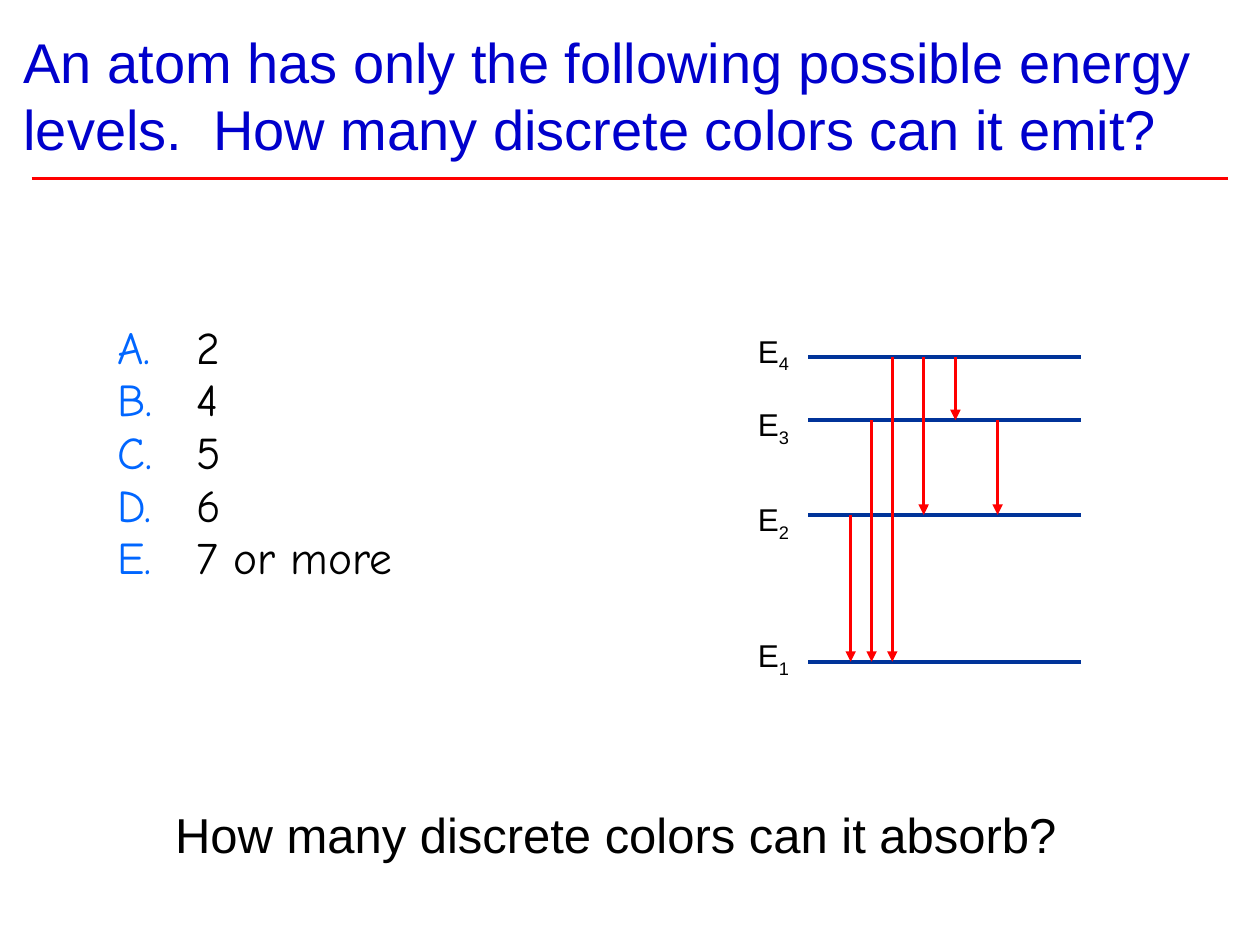
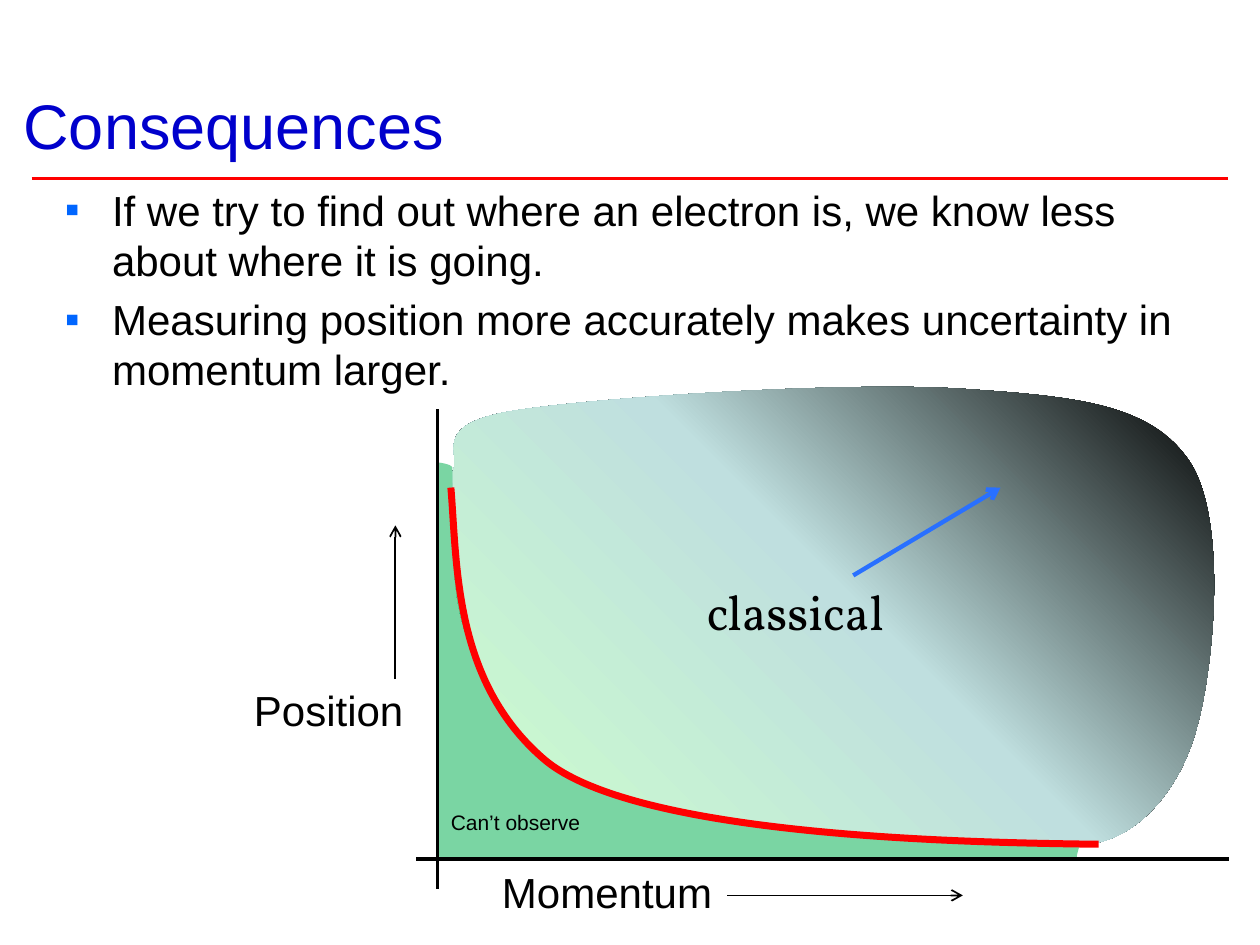
"""Build two physics slides: atomic energy levels and the uncertainty principle."""
import pptx
import pptx.dml.color
import pptx.enum.shapes
import pptx.enum.text
import pptx.oxml.ns
import pptx.util
from lxml import etree

Cm, Pt = pptx.util.Cm, pptx.util.Pt
qn = pptx.oxml.ns.qn
ALIGN = pptx.enum.text.PP_ALIGN
AUTO_SIZE = pptx.enum.text.MSO_AUTO_SIZE

COLORS = {"title": "0000CC", "red": "FF0000", "text": "000000", "bullet": "0066FF",
          "level": "003399", "pointer": "2970FF", "forbidden": "00B050"}
FONT = "Arial"

QUESTION = "An atom has only the following possible energy levels.  How many discrete colors can it emit?"
ANSWERS = ["2", "4", "5", "6", "7 or more"]
FOLLOW_UP = "How many discrete colors can it absorb?"
LEVEL_X = (16.29, 21.8)
LEVELS = {1: (13.34, 12.7), 2: (10.38, 9.95), 3: (8.47, 8.04), 4: (7.2, 6.56)}
TRANSITIONS = [(2, 1, 17.15), (3, 1, 17.57), (4, 1, 17.99),
               (4, 2, 18.62), (4, 3, 19.26), (3, 2, 20.11)]

CONSEQUENCES = [
    "If we try to find out where an electron is, we know less about where it is going.",
    "Measuring position more accurately makes uncertainty in momentum larger.",
]
GRADIENT = [(0, "000000"), (47, "BFDFDF"), (100, "CCFFCC")]
CLASSICAL_BOX = (9.12, 7.8, 15.34, 9.25)
CLASSICAL_REGION = [
    (9.14, 10.39),
    (9.14, 11.73), (9.17, 12.32), (9.55, 13.18),
    (9.93, 14.05), (10.21, 14.83), (11.38, 15.54),
    (12.57, 16.28), (14.81, 16.59), (16.69, 16.79),
    (18.57, 16.99), (20.85, 17.07), (21.87, 17.02),
    (22.89, 16.97), (23.8, 15.93), (24.13, 14.66),
    (24.49, 13.36), (24.74, 10.44), (23.98, 9.3),
    (23.22, 8.18), (21.82, 8.0), (19.56, 7.85),
    (17.27, 7.67), (12.12, 8.0), (10.36, 8.28),
    (8.64, 8.56), (9.32, 9.14), (9.12, 9.53),
    (9.14, 9.88), (9.12, 10.06), (9.14, 10.39),
]
FORBIDDEN_BOX = (8.81, 9.32, 12.95, 8.0)
FORBIDDEN_REGION = [
    (8.81, 9.32),
    (8.81, 9.32), (9.09, 9.35), (9.12, 9.42),
    (9.14, 9.5), (8.94, 13.36), (10.59, 15.01),
    (12.27, 16.69), (18.39, 17.02), (21.77, 17.02),
    (21.79, 16.99), (21.67, 17.3), (21.72, 17.3),
    (19.56, 17.35), (8.89, 17.3), (8.84, 17.27),
    (8.81, 17.27), (8.81, 9.45), (8.81, 9.32),
]
LIMIT_BOX = (9.09, 9.83, 13.06, 7.19)
LIMIT_CURVE = [
    (9.09, 9.83),
    (9.22, 11.38), (9.14, 13.72), (10.95, 15.29),
    (12.75, 16.87), (19.53, 16.99), (22.15, 17.02),
]
AXES = [((8.82, 8.25), (8.82, 17.93)), ((24.77, 17.32), (8.38, 17.32))]
GRAPH_LABELS = [
    ("Position", (4.87, 13.68, 3.56, 1.27), 24, FONT, ALIGN.LEFT),
    ("Momentum", (9.87, 17.35, 4.8, 1.27), 24, FONT, ALIGN.LEFT),
    ("Can’t observe", (8.82, 16.2, 3.15, 0.76), 12, FONT, ALIGN.CENTER),
    ("classical", (14.0, 11.6, 4.11, 1.45), 28, "Vollkorn", ALIGN.LEFT),
]
GRAPH_ARROWS = [
    ((17.2, 11.6), (20.17, 9.83), "pointer", 2.5),
    ((7.97, 13.69), (7.97, 10.59), "text", 1),
    ((14.66, 18.05), (19.41, 18.05), "text", 1),
]


def rgb(name):
    return pptx.dml.color.RGBColor.from_string(COLORS[name])


def sub(parent, tag, **attrs):
    return etree.SubElement(parent, qn(tag), attrs)


def add_run(p, text, size, color="text", font=FONT):
    r = p.add_run()
    r.text = text
    r.font.size, r.font.name = Pt(size), font
    r.font.color.rgb = rgb(color)
    return r


def add_line(s, start, end, color, width, head=None):
    x1, y1, x2, y2 = (Cm(v) for v in (*start, *end))
    c = s.shapes.add_connector(pptx.enum.shapes.MSO_CONNECTOR.STRAIGHT, x1, y1, x2, y2)
    c.line.color.rgb = rgb(color)
    c.line.width = Pt(width)
    spPr = c._element.spPr
    if head:
        sub(spPr.find(qn("a:ln")), "a:tailEnd", type=head)
    sub(spPr, "a:effectLst")
    return c


def add_text(s, box, wrap=False):
    tf = s.shapes.add_textbox(*(Cm(v) for v in box)).text_frame
    tf.word_wrap = wrap
    tf.auto_size = AUTO_SIZE.NONE if wrap else AUTO_SIZE.SHAPE_TO_FIT_TEXT
    return tf


def add_list(s, box, items, size, indent, bullet, font=FONT, spacing=1.0):
    tf = add_text(s, box, wrap=True)
    for i, item in enumerate(items):
        p = tf.paragraphs[0] if i == 0 else tf.add_paragraph()
        p.line_spacing = spacing
        p.space_before = Pt(0.2 * size)
        pPr = p._p.get_or_add_pPr()
        pPr.set("marL", str(Cm(indent)))
        pPr.set("indent", str(-Cm(indent)))
        sub(sub(pPr, "a:buClr"), "a:srgbClr", val=COLORS["bullet"])
        sub(pPr, "a:buFont", typeface=font)
        tag, attrs = bullet
        sub(pPr, tag, **attrs)
        add_run(p, item, size, font=font)


def add_curve(s, nodes, box, close):
    """Draw cubic curves through nodes: a start, then two controls and an end each."""
    fb = s.shapes.build_freeform(*(Cm(v) for v in nodes[0]))
    fb.add_line_segments([(Cm(x), Cm(y)) for x, y in nodes[3::3]], close=close)
    sp = fb.convert_to_shape()
    left, top, width, height = (Cm(v) for v in box)
    sp.left, sp.top, sp.width, sp.height = left, top, width, height
    outline = next(sp._element.iter(qn("a:path")))
    outline.clear()
    outline.set("w", str(width))
    outline.set("h", str(height))
    for i, (x, y) in enumerate(nodes):
        if i == 0:
            segment = sub(outline, "a:moveTo")
        elif i % 3 == 1:
            segment = sub(outline, "a:cubicBezTo")
        sub(segment, "a:pt", x=str(Cm(x) - left), y=str(Cm(y) - top))
    if close:
        sub(outline, "a:close")
    sp.shadow.inherit = False
    sp.line.fill.background()
    return sp


def add_slide(prs, title, size):
    s = prs.slides.add_slide(prs.slide_layouts[5])
    sp = s.shapes.title
    sp.left, sp.top, sp.width, sp.height = Cm(0.22), Cm(0.01), Cm(24.96), Cm(3.38)
    tf = sp.text_frame
    tf.auto_size = AUTO_SIZE.NONE
    tf.vertical_anchor = pptx.enum.text.MSO_ANCHOR.BOTTOM
    p = tf.paragraphs[0]
    p.alignment = ALIGN.LEFT
    add_run(p, title, size, "title")
    return s


def add_title_rule(prs, s):
    rule = add_line(s, (0.64, 3.6), (24.76, 3.6), "red", 1.5)
    prs.slide_master._element.cSld.spTree.append(rule._element)


def build_energy_levels(prs):
    s = add_slide(prs, QUESTION, 32)
    add_title_rule(prs, s)
    left, right = LEVEL_X
    for y, _ in LEVELS.values():
        add_line(s, (left, y), (right, y), "level", 2.25)
    for upper, lower, x in TRANSITIONS:
        add_line(s, (x, LEVELS[upper][0]), (x, LEVELS[lower][0]), "red", 1.5, "triangle")
    for n, (_, top) in LEVELS.items():
        p = add_text(s, (15.03, top, 1.17, 1.02)).paragraphs[0]
        add_run(p, "E", 18)
        add_run(p, str(n), 18)._r.get_or_add_rPr().set("baseline", "-25000")
    add_list(s, (2.12, 6.51, 11.43, 6.15), ANSWERS, 26, 1.59,
             ("a:buAutoNum", {"type": "alphaUcPeriod"}), "Comic Neue", 0.8)
    add_run(add_text(s, (3.28, 16.09, 18.52, 1.45)).paragraphs[0], FOLLOW_UP, 28)


def build_consequences(prs):
    s = add_slide(prs, "Consequences", 36)
    add_list(s, (1.06, 3.59, 23.29, 4.88), CONSEQUENCES, 24, 0.95, ("a:buChar", {"char": "▪"}))

    sp = add_curve(s, CLASSICAL_REGION, CLASSICAL_BOX, True)
    sp.fill.gradient()
    sp.fill.gradient_angle = 225
    stops = sp._element.spPr.find(qn("a:gradFill")).find(qn("a:gsLst"))
    stops.clear()
    for pos, color in GRADIENT:
        sub(sub(stops, "a:gs", pos=str(pos * 1000)), "a:srgbClr", val=color)

    sp = add_curve(s, FORBIDDEN_REGION, FORBIDDEN_BOX, True)
    sp.fill.solid()
    sp.fill.fore_color.rgb = rgb("forbidden")
    fill = sp._element.spPr.find(qn("a:solidFill"))
    sub(fill.find(qn("a:srgbClr")), "a:alpha", val="52000")

    for start, end in AXES:
        add_line(s, start, end, "text", 2)
    sp = add_curve(s, LIMIT_CURVE, LIMIT_BOX, False)
    sp.fill.background()
    sp.line.color.rgb = rgb("red")
    sp.line.width = Pt(4)

    for text, box, size, font, align in GRAPH_LABELS:
        p = add_text(s, box).paragraphs[0]
        p.alignment = align
        add_run(p, text, size, font=font)
    for start, end, color, width in GRAPH_ARROWS:
        add_line(s, start, end, color, width, "arrow")


def main():
    prs = pptx.Presentation()
    prs.slide_width, prs.slide_height = Cm(25.4), Cm(19.05)
    build_energy_levels(prs)
    build_consequences(prs)
    prs.save("out.pptx")


if __name__ == "__main__":
    main()
